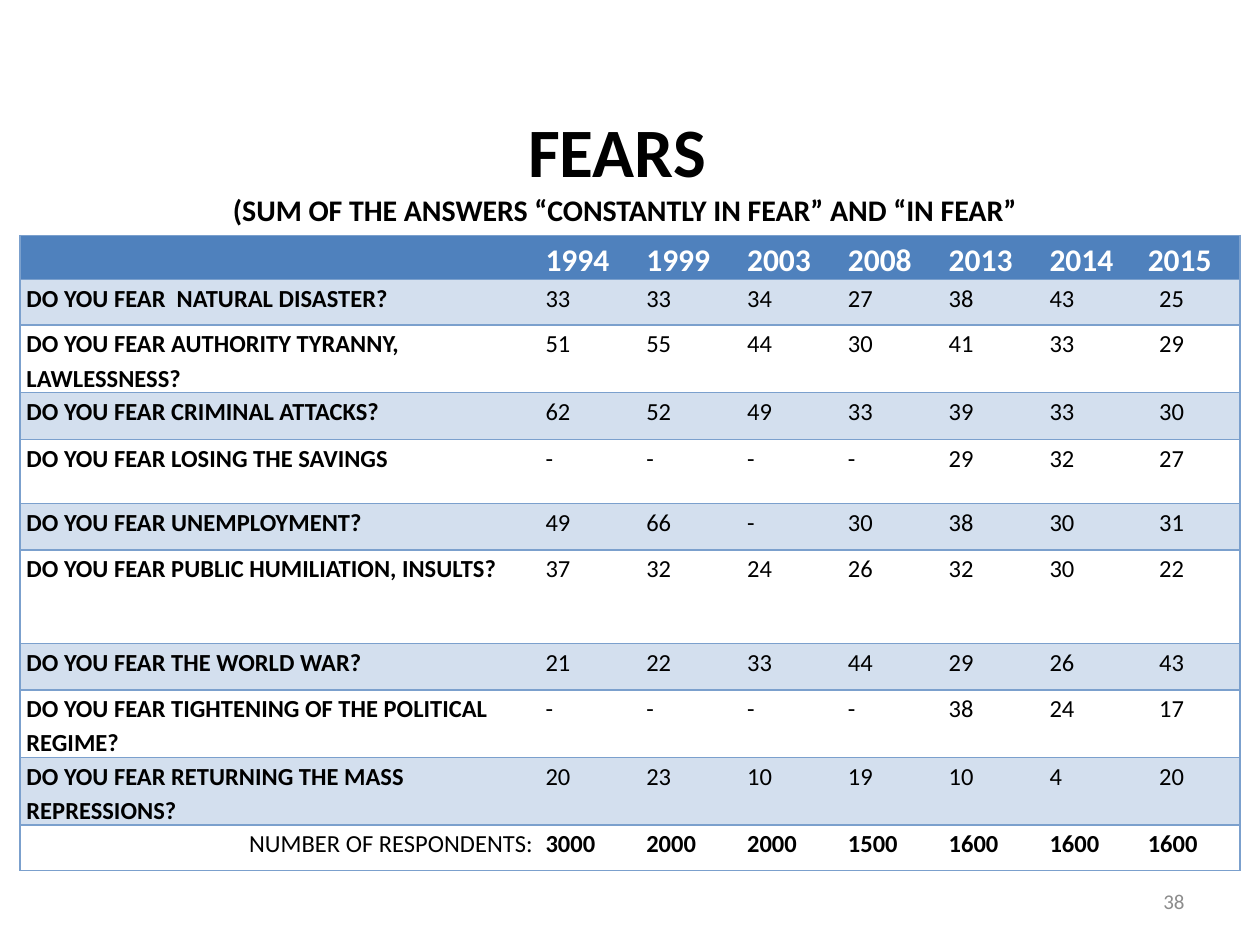
from dataclasses import dataclass

from pptx import Presentation
from pptx.dml.color import RGBColor
from pptx.enum.text import MSO_ANCHOR as Anchor, MSO_AUTO_SIZE as AutoSize, PP_ALIGN as Align
from pptx.oxml import parse_xml
from pptx.oxml.ns import nsdecls
from pptx.util import Inches, Pt

BLACK = RGBColor(0x00, 0x00, 0x00)
WHITE = RGBColor(0xFF, 0xFF, 0xFF)
GRAY = RGBColor(0x8C, 0x8C, 0x8C)
HEADER_BLUE = RGBColor(0x4F, 0x81, 0xBD)
BAND_BLUE = RGBColor(0xD3, 0xDF, 0xEE)
BORDER_BLUE = RGBColor(0x7B, 0xA0, 0xCD)
FONT = "Calibri"

COLUMN_WIDTHS = [4.12] + [0.8] * 5 + [0.78] * 2
SIDE_MARGIN = 0.05
LAST_COLUMN_INDENT = 0.09


@dataclass
class Row:
    height: float
    label: str
    values: str


HEADER = Row(0.35, "", "1994 1999 2003 2008 2013 2014 2015")
QUESTIONS = [
    Row(0.36, "DO YOU FEAR  NATURAL DISASTER?", "33 33 34 27 38 43 25"),
    Row(0.37, "DO YOU FEAR AUTHORITY TYRANNY, LAWLESSNESS?", "51 55 44 30 41 33 29"),
    Row(0.37, "DO YOU FEAR CRIMINAL ATTACKS?", "62 52 49 33 39 33 30"),
    Row(0.51, "DO YOU FEAR LOSING THE SAVINGS", "- - - - 29 32 27"),
    Row(0.37, "DO YOU FEAR UNEMPLOYMENT?", "49 66 - 30 38 30 31"),
    Row(0.74, "DO YOU FEAR PUBLIC HUMILIATION, INSULTS?", "37 32 24 26 32 30 22"),
    Row(0.37, "DO YOU FEAR THE WORLD WAR?", "21 22 33 44 29 26 43"),
    Row(0.51, "DO YOU FEAR TIGHTENING OF THE POLITICAL REGIME?", "- - - - 38 24 17"),
    Row(0.51, "DO YOU FEAR RETURNING THE MASS REPRESSIONS?", "20 23 10 19 10 4 20"),
]
RESPONDENTS = Row(0.36, "NUMBER OF RESPONDENTS:", "3000 2000 2000 1500 1600 1600 1600")
ROWS = [HEADER, *QUESTIONS, RESPONDENTS]


def style_font(font, size: float, color: RGBColor, bold: bool = False) -> None:
    font.name = FONT
    font.size = Pt(size)
    font.bold = bold
    font.color.rgb = color


def set_borders(cell, visible_sides: str) -> None:
    """Draw the sides named in visible_sides (L, R, T, B) and clear the others."""
    properties = cell._tc.get_or_add_tcPr()
    for side in "LRTB":
        line = (f'<a:solidFill><a:srgbClr val="{BORDER_BLUE}"/></a:solidFill>'
                if side in visible_sides else "<a:noFill/>")
        properties.append(parse_xml(
            f'<a:ln{side} {nsdecls("a")} w="{Pt(1)}">{line}</a:ln{side}>'))


def fill_cell(cell, text: str, row: int, column: int) -> None:
    last_row, last_column = len(ROWS) - 1, len(COLUMN_WIDTHS) - 1
    is_header, is_total = row == 0, row == last_row
    is_label = column == 0

    # Margins and borders
    indented = column == last_column and not (is_header or is_total)
    cell.margin_left = Inches(SIDE_MARGIN + (LAST_COLUMN_INDENT if indented else 0))
    cell.margin_right = Inches(SIDE_MARGIN)
    cell.margin_top = cell.margin_bottom = 0
    set_borders(cell, "TB" + {0: "L", last_column: "R"}.get(column, ""))

    # Fill
    if is_header or row % 2:
        cell.fill.solid()
        cell.fill.fore_color.rgb = HEADER_BLUE if is_header else BAND_BLUE
    else:
        cell.fill.background()

    # Text
    cell.text_frame.text = text
    paragraph = cell.text_frame.paragraphs[0]
    paragraph.line_spacing = 1.15
    paragraph.alignment = Align.RIGHT if is_total and is_label else Align.LEFT
    if not text:
        paragraph.font.size = Pt(14)
    for run in paragraph.runs:
        if is_header:
            style_font(run.font, 18, WHITE, bold=True)
        else:
            style_font(run.font, 14, BLACK, bold=is_label != is_total)


def add_title(slide) -> None:
    title = slide.shapes.title
    title.left, title.top = Inches(0.43), Inches(0.94)
    title.width, title.height = Inches(9.06), Inches(0.78)
    text_frame = title.text_frame
    text_frame.text = "FEARS \v(SUM OF THE ANSWERS “CONSTANTLY IN FEAR” AND “IN FEAR”"
    text_frame.auto_size = AutoSize.NONE
    text_frame.vertical_anchor = Anchor.MIDDLE
    paragraph = text_frame.paragraphs[0]
    paragraph.alignment = Align.CENTER
    for run, size in zip(paragraph.runs, (39.6, 17.1)):
        style_font(run.font, size, BLACK, bold=True)


def add_fears_table(slide) -> None:
    frame = slide.shapes.add_table(len(ROWS), len(COLUMN_WIDTHS), Inches(0.16),
                                   Inches(1.87), Inches(9.69), Inches(5.03))
    table = frame.table
    for column, width in zip(table.columns, COLUMN_WIDTHS):
        column.width = Inches(width)
    for row_index, row in enumerate(ROWS):
        table.rows[row_index].height = Inches(row.height)
        for column_index, text in enumerate([row.label, *row.values.split()]):
            fill_cell(table.cell(row_index, column_index), text, row_index, column_index)


def add_page_number(slide, number: str) -> None:
    shape = slide.shapes.add_textbox(Inches(7.17), Inches(6.95), Inches(2.33), Inches(0.4))
    text_frame = shape.text_frame
    text_frame.word_wrap = True
    text_frame.vertical_anchor = Anchor.MIDDLE
    text_frame.text = number
    paragraph = text_frame.paragraphs[0]
    paragraph.alignment = Align.RIGHT
    style_font(paragraph.runs[0].font, 12, GRAY)


def main() -> None:
    presentation = Presentation()
    presentation.slide_width, presentation.slide_height = Inches(10), Inches(7.5)
    title_only = presentation.slide_layouts[5]
    slide = presentation.slides.add_slide(title_only)
    add_title(slide)
    add_page_number(slide, "38")
    add_fears_table(slide)
    presentation.save("out.pptx")


if __name__ == "__main__":
    main()
